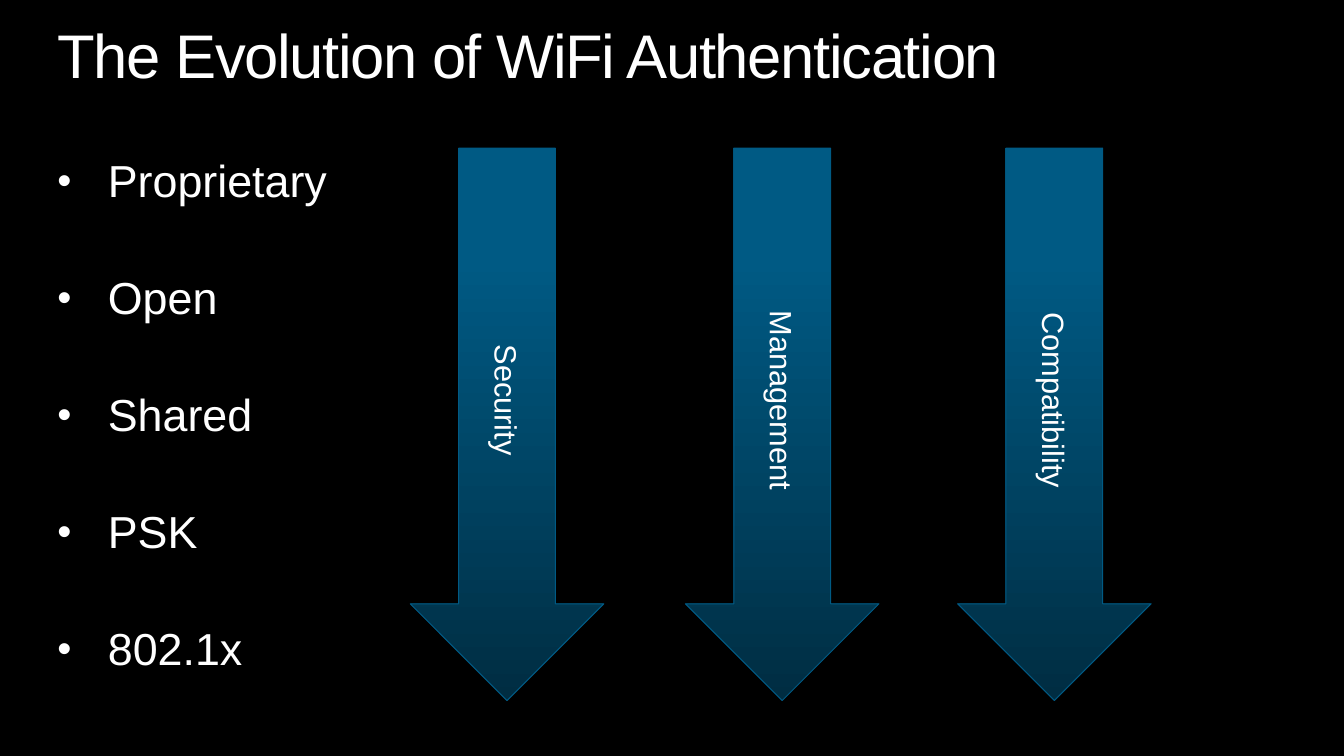
"""Build the slide on the evolution of WiFi authentication."""
from dataclasses import dataclass

from lxml import etree
from pptx import Presentation
from pptx.dml.color import RGBColor
from pptx.enum.shapes import MSO_SHAPE
from pptx.enum.text import MSO_ANCHOR, PP_ALIGN
from pptx.oxml.ns import qn
from pptx.slide import Slide
from pptx.text.text import TextFrame, _Paragraph
from pptx.util import Pt

DOWN_ARROW = MSO_SHAPE.DOWN_ARROW
TOP, MIDDLE = MSO_ANCHOR.TOP, MSO_ANCHOR.MIDDLE
CENTER = PP_ALIGN.CENTER

BLACK = RGBColor(0x00, 0x00, 0x00)
WHITE = RGBColor(0xFF, 0xFF, 0xFF)
NAVY = RGBColor(0x00, 0x2D, 0x42)
BLUE = RGBColor(0x00, 0x5A, 0x84)

FONT = "Arial"
MARGIN_LEFT, TEXT_WIDTH = 41.04, 877.68
ARROW_TOP, ARROW_WIDTH, ARROW_HEIGHT = 105.84, 138.24, 394.56
BULLET_INDENT, BULLET_GAP = 36, 48.9

TEXT_FRAME = {"word_wrap": True, "vertical_anchor": TOP, "margin_left": 0,
              "margin_top": 0, "margin_right": 0, "margin_bottom": 0}
ARROW_FRAME = {"word_wrap": True, "vertical_anchor": MIDDLE}


@dataclass(frozen=True)
class Arrow:
    label: str
    left: float


ARROWS = [Arrow("Security", 293.04), Arrow("Management", 489.6),
          Arrow("Compatibility", 684)]
METHODS = ["Proprietary", "Open", "Shared", "PSK", "802.1x"]


def apply(target: object, values: dict) -> None:
    for name, value in values.items():
        setattr(target, name, value)


def write(p: _Paragraph, text: str, size: float, spacing: float = 0) -> None:
    r = p.add_run()
    r.text = text
    apply(r.font, {"name": FONT, "size": Pt(size)})
    r.font.color.rgb = WHITE
    if spacing:
        r.font._element.set("spc", str(round(spacing * 100)))


def add_text_frame(s: Slide, top: float, height: float) -> TextFrame:
    sp = s.shapes.add_textbox(Pt(MARGIN_LEFT), Pt(top), Pt(TEXT_WIDTH), Pt(height))
    apply(sp.text_frame, TEXT_FRAME)
    return sp.text_frame


def add_title(s: Slide, text: str) -> None:
    p = add_text_frame(s, 18, 48.24).paragraphs[0]
    p.line_spacing = 0.9
    write(p, text, 44, -1)


def add_bullets(s: Slide, items: list[str]) -> None:
    tf = add_text_frame(s, 113.76, 375.84)
    for i, item in enumerate(items):
        p = tf.add_paragraph() if i else tf.paragraphs[0]
        pPr = p._p.get_or_add_pPr()
        pPr.set("marL", str(Pt(BULLET_INDENT)))
        pPr.set("indent", str(-Pt(BULLET_INDENT)))
        etree.SubElement(pPr, qn("a:buSzPct"), val="90000")
        etree.SubElement(pPr, qn("a:buFont"), typeface=FONT)
        etree.SubElement(pPr, qn("a:buChar"), char="•")
        apply(p, {"line_spacing": 0.9, "space_before": Pt(BULLET_GAP if i else 0)})
        write(p, item, 32)


def add_arrow(s: Slide, arrow: Arrow) -> None:
    sp = s.shapes.add_shape(DOWN_ARROW, Pt(arrow.left), Pt(ARROW_TOP),
                            Pt(ARROW_WIDTH), Pt(ARROW_HEIGHT))
    sp.shadow.inherit = False
    sp.fill.gradient()
    sp.fill.gradient_angle = 90
    for stop, color, position in zip(sp.fill.gradient_stops, (NAVY, BLUE), (0, 0.8)):
        stop.color.rgb = color
        stop.position = position
    sp.line.color.rgb = BLUE
    sp.line.width = Pt(0.75)
    tf = sp.text_frame
    apply(tf, ARROW_FRAME)
    tf._txBody.bodyPr.set("vert", "vert")
    p = tf.paragraphs[0]
    p.alignment = CENTER
    write(p, arrow.label, 22)


def main() -> None:
    prs = Presentation()
    apply(prs, {"slide_width": Pt(960), "slide_height": Pt(540)})
    s = prs.slides.add_slide(prs.slide_layouts[6])
    s.background.fill.solid()
    s.background.fill.fore_color.rgb = BLACK
    add_title(s, "The Evolution of WiFi Authentication")
    add_bullets(s, METHODS)
    for arrow in ARROWS:
        add_arrow(s, arrow)
    prs.save("out.pptx")


if __name__ == "__main__":
    main()
